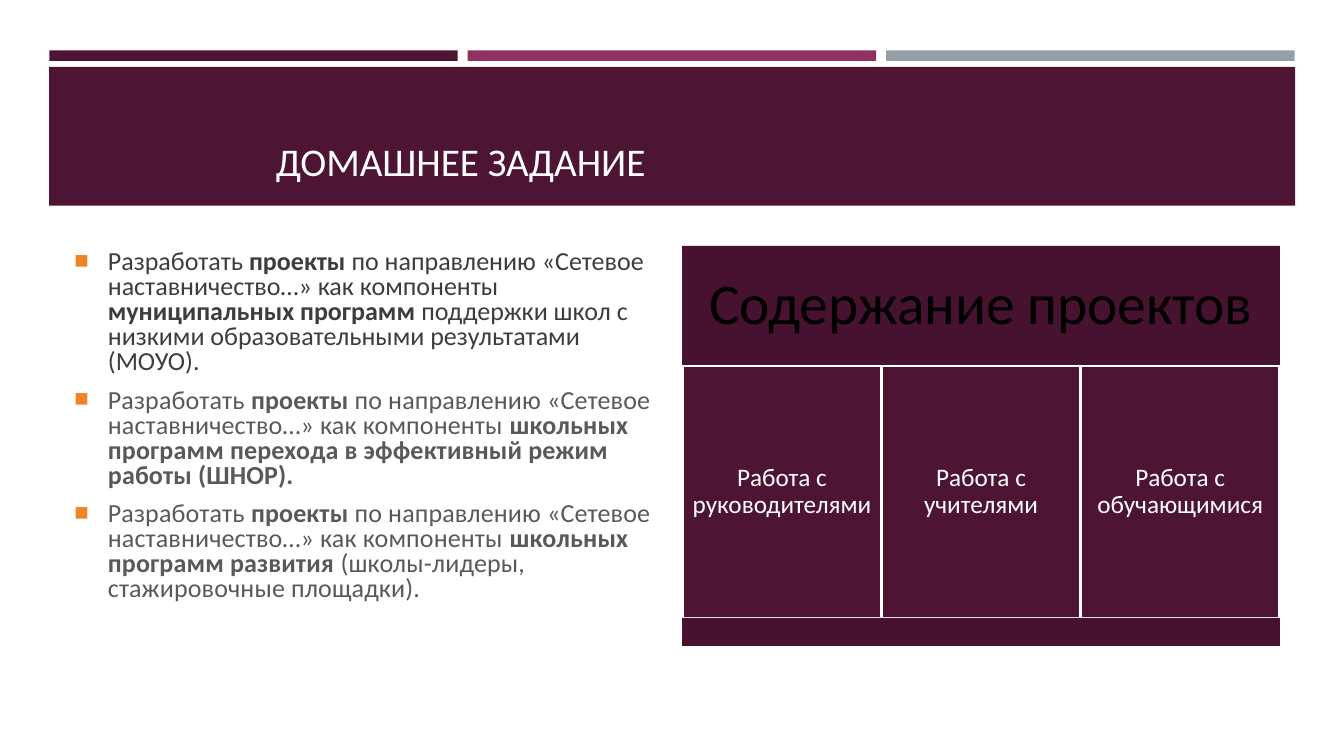
from lxml.etree import SubElement
from pptx import Presentation
from pptx.dml.color import RGBColor
from pptx.enum.shapes import MSO_SHAPE as SHAPE
from pptx.enum.text import MSO_ANCHOR as ANCHOR, PP_ALIGN as ALIGN
from pptx.oxml.ns import qn
from pptx.util import Pt

PLUM, DARK_PLUM, WHITE = "4D1434", "46122F", "FFFFFF"

prs = Presentation()
prs.slide_width, prs.slide_height = Pt(960), Pt(540)
s = prs.slides.add_slide(prs.slide_layouts[6])


def add_box(x, y, w, h, fill=None, line=None, inset=(7.2, 3.6), anchor=ANCHOR.MIDDLE):
    sp = s.shapes.add_shape(SHAPE.RECTANGLE, Pt(x), Pt(y), Pt(w), Pt(h))
    sp.shadow.inherit = False
    if fill:
        sp.fill.solid()
        sp.fill.fore_color.rgb = RGBColor.from_string(fill)
    else:
        sp.fill.background()
    if line:
        sp.line.color.rgb = RGBColor.from_string(line)
        sp.line.width = Pt(1.75)
    else:
        sp.line.fill.background()
    tf = sp.text_frame
    tf.word_wrap = True
    tf.vertical_anchor = anchor
    tf.margin_left = tf.margin_right = Pt(inset[0])
    tf.margin_top = tf.margin_bottom = Pt(inset[1])
    return tf


def add_text(p, text, size=18, color=WHITE, bold=False, align=ALIGN.CENTER, spacing=0.9, track=0):
    p.alignment = align
    p.line_spacing = spacing
    r = p.add_run()
    r.text = text
    r.font.name = "Calibri"
    r.font.size = Pt(size)
    r.font.bold = bold
    r.font.color.rgb = RGBColor.from_string(color)
    if track:
        r.font._element.set("spc", str(track))


for i, color in enumerate([PLUM, "903163", "969FA7"]):
    add_box(35.2 + i * 298.9, 36, 291.7, 7.6, color)
add_box(35.2, 47.8, 889.9, 99.2, PLUM)

title = add_box(46, 57.6, 868.3, 77.8, anchor=ANCHOR.BOTTOM)
title.margin_left = Pt(151)
add_text(title.paragraphs[0], "ДОМАШНЕЕ ЗАДАНИЕ", size=28, align=ALIGN.LEFT, spacing=1)

start = "Разработать "
direction = " по направлению «Сетевое наставничество…» как компоненты "
tasks = [
    ("3D3D3D", 0, "муниципальных программ ",
     "поддержки школ с низкими образовательными результатами (МОУО)."),
    ("595959", 10, "школьных программ перехода в эффективный режим работы (ШНОР).", ""),
    ("595959", 10, "школьных программ развития ", "(школы-лидеры, стажировочные площадки)."),
]
body = add_box(46, 175.4, 427, 285.8, anchor=ANCHOR.TOP)
for i, (color, track, programs, ending) in enumerate(tasks):
    p = body.add_paragraph() if i else body.paragraphs[0]
    p.space_before, p.space_after = Pt(3.7), Pt(6)
    runs = [(start, False), ("проекты", True), (direction, False), (programs, True), (ending, False)]
    for text, bold in runs:
        if text:
            add_text(p, text, size=18.6, color=color, bold=bold,
                     align=ALIGN.LEFT, spacing=0.8, track=track)
    pPr = p._p.get_or_add_pPr()
    pPr.set("marL", str(Pt(24)))
    pPr.set("indent", str(-Pt(24)))
    SubElement(SubElement(pPr, qn("a:buClr")), qn("a:srgbClr"), val="ED8428")
    SubElement(pPr, qn("a:buSzPct"), val="92000")
    SubElement(pPr, qn("a:buFont"), typeface="Arial")
    SubElement(pPr, qn("a:buChar"), char="■")

left, width = 487.3, 427
header = add_box(left, 175.6, width, 85.8, DARK_PLUM, inset=(12, 12))
add_text(header.paragraphs[0], "Содержание проектов", size=41, color="000000")
for i, group in enumerate(["руководителями", "учителями", "обучающимися"]):
    column = add_box(left + 0.2 + i * 142.2, 261.4, 142.2, 180, PLUM, WHITE, inset=(5, 5))
    add_text(column.paragraphs[0], f"Работа с {group}")
add_box(left, 441.4, width, 20, DARK_PLUM)

prs.save("out.pptx")
